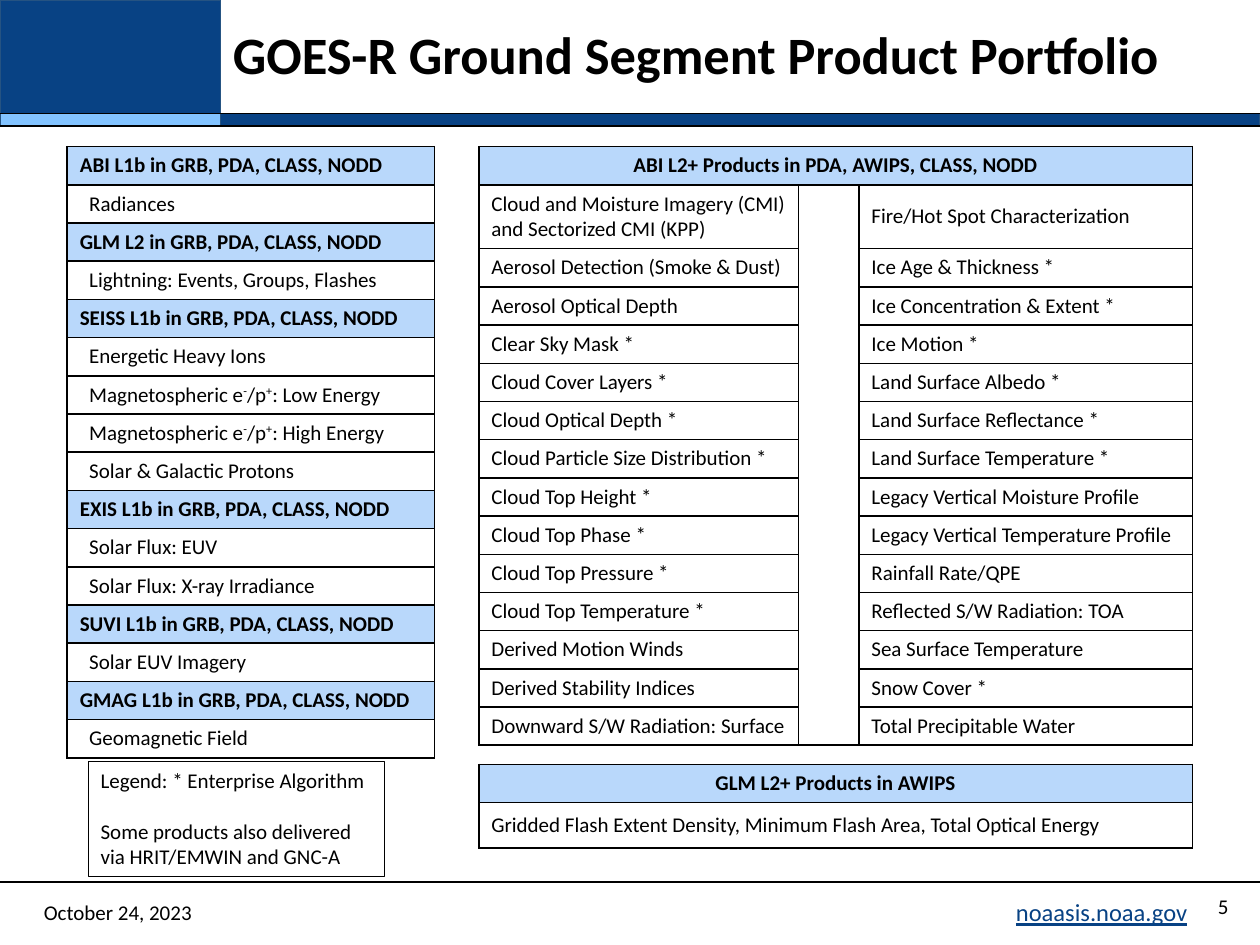
"""Build the GOES-R Ground Segment Product Portfolio slide."""
from lxml import etree
from pptx import Presentation
from pptx.dml.color import RGBColor
from pptx.enum import shapes, text
from pptx.oxml import ns
from pptx.util import Pt

NAVY = RGBColor(0x08, 0x42, 0x84)
EDGE = RGBColor(0x25, 0x53, 0x82)
SKY = RGBColor(0x82, 0xC3, 0xFF)
PALE = RGBColor(0xB9, 0xD8, 0xFB)
BLACK = RGBColor(0, 0, 0)
WHITE = RGBColor(0xFF, 0xFF, 0xFF)
LEFT, CENTER, RIGHT = text.PP_ALIGN.LEFT, text.PP_ALIGN.CENTER, text.PP_ALIGN.RIGHT
TOP, MIDDLE = text.MSO_ANCHOR.TOP, text.MSO_ANCHOR.MIDDLE
ROW = 21.85

INSTRUMENTS = [
    ("ABI L1b", ["Radiances"]),
    ("GLM L2", ["Lightning: Events, Groups, Flashes"]),
    ("SEISS L1b", ["Energetic Heavy Ions", "Magnetospheric e^-^/p^+^: Low Energy",
                   "Magnetospheric e^-^/p^+^: High Energy", "Solar & Galactic Protons"]),
    ("EXIS L1b", ["Solar Flux: EUV", "Solar Flux: X-ray Irradiance"]),
    ("SUVI L1b", ["Solar EUV Imagery"]),
    ("GMAG L1b", ["Geomagnetic Field"]),
]
ABI_PRODUCTS = [
    ("Cloud and Moisture Imagery (CMI) and Sectorized CMI (KPP)", "Fire/Hot Spot Characterization"),
    ("Aerosol Detection (Smoke & Dust)", "Ice Age & Thickness *"),
    ("Aerosol Optical Depth", "Ice Concentration & Extent *"),
    ("Clear Sky Mask *", "Ice Motion *"),
    ("Cloud Cover Layers *", "Land Surface Albedo *"),
    ("Cloud Optical Depth *", "Land Surface Reflectance *"),
    ("Cloud Particle Size Distribution *", "Land Surface Temperature *"),
    ("Cloud Top Height *", "Legacy Vertical Moisture Profile"),
    ("Cloud Top Phase *", "Legacy Vertical Temperature Profile"),
    ("Cloud Top Pressure *", "Rainfall Rate/QPE"),
    ("Cloud Top Temperature *", "Reflected S/W Radiation: TOA"),
    ("Derived Motion Winds", "Sea Surface Temperature"),
    ("Derived Stability Indices", "Snow Cover *"),
    ("Downward S/W Radiation: Surface", "Total Precipitable Water"),
]


def write(frame, *lines, size=12, color=BLACK, bold=False, underline=False,
          align=LEFT, gap=0, spacing=None):
    """Fill a text frame; parts between carets are superscript."""
    for index, line in enumerate(lines):
        paragraph = frame.add_paragraph() if index else frame.paragraphs[0]
        paragraph.alignment = align
        if index:
            paragraph.space_before = Pt(gap)
        if spacing:
            paragraph.line_spacing = spacing
        for position, part in enumerate(line.split("^")):
            run = paragraph.add_run()
            run.text = part
            font = run.font
            font.name, font.size, font.bold = "Calibri", Pt(size), bold
            font.underline = underline
            font.color.rgb = color
            if position % 2:
                run._r.get_or_add_rPr().set("baseline", "30000")


def set_frame(frame, anchor, insets):
    """Set wrapping, anchor and insets (left, top, right, bottom)."""
    frame.word_wrap = True
    frame.vertical_anchor = anchor
    (frame.margin_left, frame.margin_top,
     frame.margin_right, frame.margin_bottom) = map(Pt, insets)


def add_label(slide, box, *lines, insets=(7.2, 3.6, 7.2, 3.6), **style):
    """Add a vertically centred text box."""
    label = slide.shapes.add_textbox(*map(Pt, box))
    set_frame(label.text_frame, MIDDLE, insets)
    write(label.text_frame, *lines, **style)


def add_rectangle(slide, box, fill=None, outline=EDGE):
    """Add a flat rectangle with a thin outline."""
    rectangle = slide.shapes.add_shape(shapes.MSO_SHAPE.RECTANGLE, *map(Pt, box))
    rectangle.shadow.inherit = False
    if fill is None:
        rectangle.fill.background()
    else:
        rectangle.fill.solid()
        rectangle.fill.fore_color.rgb = fill
    rectangle.line.color.rgb = outline
    rectangle.line.width = Pt(0.75)
    return rectangle


def add_rule(slide, y):
    """Draw a black rule across the slide."""
    rule = slide.shapes.add_connector(shapes.MSO_CONNECTOR.STRAIGHT, 0, Pt(y), Pt(720), Pt(y))
    rule.line.color.rgb = BLACK
    rule.line.width = Pt(1)
    etree.SubElement(rule._element.spPr, ns.qn("a:effectLst"))


def add_grid(slide, left, top, widths, heights):
    """Add an unstyled table with black borders and empty cells."""
    grid = slide.shapes.add_table(len(heights), len(widths), Pt(left), Pt(top),
                                  Pt(sum(widths)), Pt(sum(heights))).table
    grid.first_row = grid.horz_banding = False
    for column, width in zip(grid.columns, widths):
        column.width = Pt(width)
    for row, height in zip(grid.rows, heights):
        row.height = Pt(height)
    for cell in grid.iter_cells():
        properties = cell._tc.get_or_add_tcPr()
        for side in ("a:lnL", "a:lnR", "a:lnT", "a:lnB"):
            border = etree.SubElement(properties, ns.qn(side), w=str(Pt(1)))
            paint = etree.SubElement(border, ns.qn("a:solidFill"))
            etree.SubElement(paint, ns.qn("a:srgbClr"), val=str(BLACK))
        cell.fill.background()
    return grid


def fill_cell(cell, words, heading=False, indent=0, align=LEFT):
    """Write a table cell as a heading or a product."""
    cell.vertical_anchor = MIDDLE
    cell.margin_left = Pt(7.2 + indent)
    cell.fill.solid()
    cell.fill.fore_color.rgb = PALE if heading else WHITE
    write(cell.text_frame, words, bold=heading, align=align)


def add_instruments(slide):
    """Add the table of products by instrument."""
    rows = []
    for instrument, products in INSTRUMENTS:
        rows.append((f"{instrument} in GRB, PDA, CLASS, NODD", True))
        rows += [(product, False) for product in products]
    grid = add_grid(slide, 38.4, 83.8, [210], [ROW] * len(rows))
    for index, (words, heading) in enumerate(rows):
        fill_cell(grid.cell(index, 0), words, heading, indent=0 if heading else 5.4)


def add_abi_products(slide):
    """Add the two-column table of ABI products."""
    heights = [ROW, 36.5] + [ROW] * (len(ABI_PRODUCTS) - 1)
    grid = add_grid(slide, 273.6, 83.8, [182.8, 34.4, 190.6], heights)
    grid.cell(0, 0).merge(grid.cell(0, 2))
    grid.cell(1, 1).merge(grid.cell(len(ABI_PRODUCTS), 1))
    fill_cell(grid.cell(0, 0), "ABI L2+ Products in PDA, AWIPS, CLASS, NODD", True, align=CENTER)
    for index, pair in enumerate(ABI_PRODUCTS, 1):
        for column, product in zip((0, 2), pair):
            fill_cell(grid.cell(index, column), product)


def add_glm_products(slide):
    """Add the table of GLM products."""
    grid = add_grid(slide, 273.6, 436.8, [407.8], [ROW, 25.9])
    fill_cell(grid.cell(0, 0), "GLM L2+ Products in AWIPS", True, align=CENTER)
    fill_cell(grid.cell(1, 0),
              "Gridded Flash Extent Density, Minimum Flash Area, Total Optical Energy")


def add_legend(slide):
    """Add the outlined legend."""
    legend = add_rectangle(slide, (50.4, 435.3, 169.2, 65.8), outline=BLACK)
    set_frame(legend.text_frame, TOP, (7.2, 3.6, 7.2, 3.6))
    write(legend.text_frame, "Legend: * Enterprise Algorithm",
          "Some products also delivered via HRIT/EMWIN and GNC-A", gap=14.4)


def main():
    """Assemble and save the slide."""
    deck = Presentation()
    deck.slide_width, deck.slide_height = Pt(720), Pt(540)
    slide = deck.slides.add_slide(deck.slide_layouts[6])
    add_rectangle(slide, (0, 0, 126, 64.8), NAVY)
    add_rectangle(slide, (126, 64.8, 594, 7.2), NAVY)
    add_rectangle(slide, (0, 64.8, 126, 7.2), SKY)
    for y in (72, 64.8, 504):
        add_rule(slide, y)
    add_label(slide, (126, 0.7, 576, 64.8), "GOES-R Ground Segment Product Portfolio",
              size=30, bold=True, spacing=0.9)
    add_label(slide, (630, 504, 72, 31.7), "5", insets=(0, 0, 0, 3.6), align=RIGHT)
    add_label(slide, (18, 507, 117.4, 28.8), "October 24, 2023")
    add_instruments(slide)
    add_abi_products(slide)
    add_legend(slide)
    add_label(slide, (576.7, 512.6, 105.8, 17.3), "noaasis.noaa.gov", insets=(0, 0, 0, 0),
              size=14, color=NAVY, underline=True, align=CENTER)
    add_glm_products(slide)
    deck.save("out.pptx")


if __name__ == "__main__":
    main()
